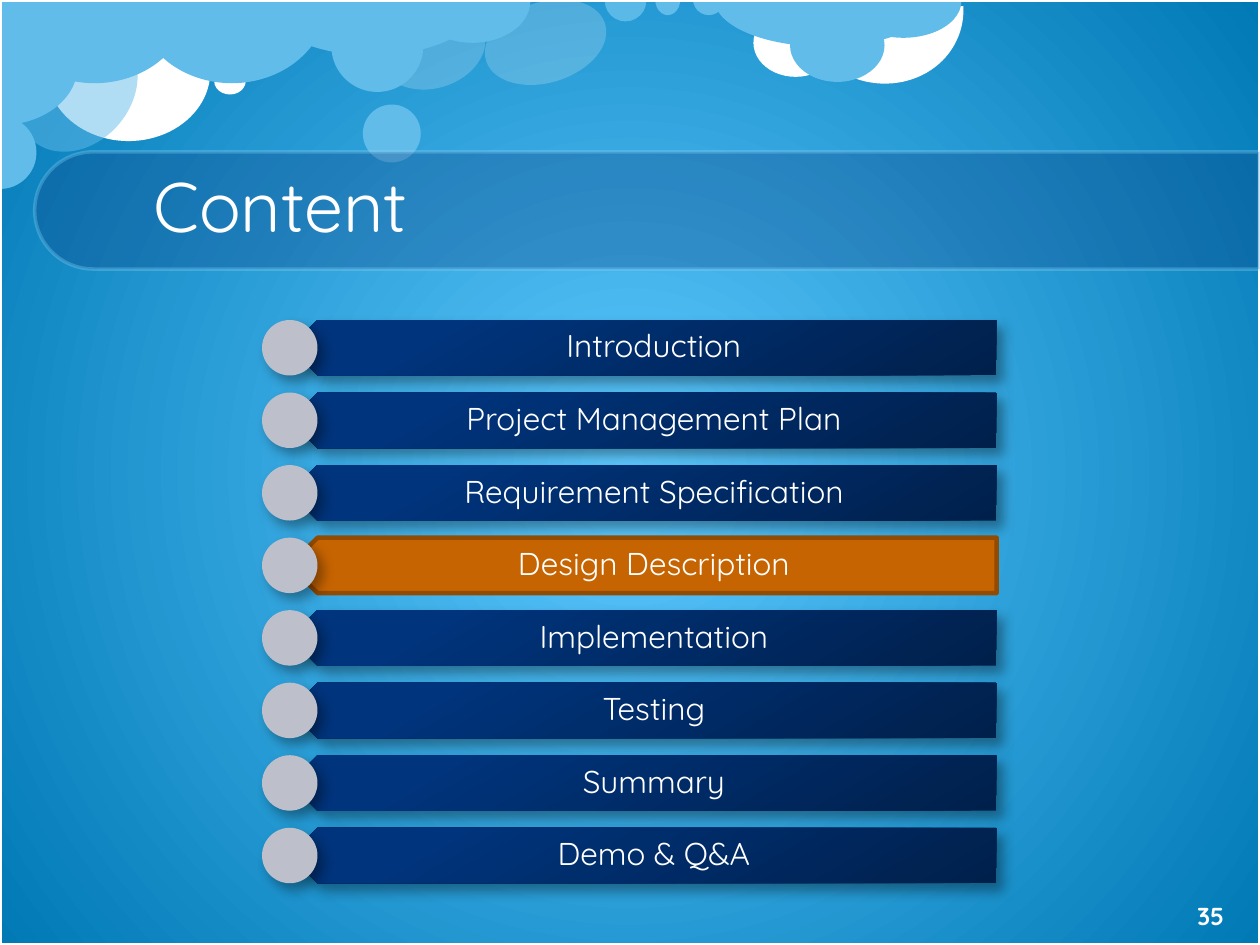
"""Build the agenda slide with a cloudy sky and the current topic highlighted."""
from typing import NamedTuple, Optional

import lxml.etree
import pptx
import pptx.dml.color
import pptx.enum.shapes
import pptx.enum.text
import pptx.oxml.ns
import pptx.util

Inches = pptx.util.Inches
Pt = pptx.util.Pt
RGBColor = pptx.dml.color.RGBColor
Shape = pptx.enum.shapes.MSO_SHAPE
Align = pptx.enum.text.PP_ALIGN
qn = pptx.oxml.ns.qn

FONT = "Quicksand"
WHITE = RGBColor(0xFF, 0xFF, 0xFF)
BLACK = RGBColor(0x00, 0x00, 0x00)
CLOUD = RGBColor(0x62, 0xBC, 0xE9)
PALE = RGBColor(0x8F, 0xD9, 0xFB)
BANNER = RGBColor(0x07, 0x37, 0x79)
SKY_CENTER = RGBColor(0x5D, 0xC9, 0xFF)
SKY_EDGE = RGBColor(0x00, 0x79, 0xB5)
NAVY_DARK = RGBColor(0x00, 0x20, 0x4C)
NAVY = RGBColor(0x00, 0x34, 0x7C)
NAVY_LIGHT = RGBColor(0x00, 0x34, 0x7D)
ORANGE = RGBColor(0xC7, 0x64, 0x02)
BROWN = RGBColor(0x93, 0x4A, 0x01)
GREY = RGBColor(0xBD, 0xBF, 0xCB)

HALF = (0, 108.0)
TOPICS = ["Introduction", "Project Management Plan", "Requirement Specification",
          "Design Description", "Implementation", "Testing", "Summary", "Demo & Q&A"]
CURRENT = "Design Description"
FIRST_TOP, LAST_TOP, ROW_H = 2.54, 6.57, 0.44


class Puff(NamedTuple):
    """One piece of a cloud, in inches and degrees."""
    left: float
    top: float
    width: float
    height: float
    kind: Shape = Shape.OVAL
    color: RGBColor = CLOUD
    alpha: int = 100
    rotation: float = 0
    adjust: tuple = ()


PUFFS = [
    Puff(3.11, -0.05, 0.64, 0.86, color=WHITE, alpha=20, rotation=72.8),
    Puff(0.37, 0.01, 1.3, 1.11, color=WHITE),
    Puff(6.39, -0.6, 1.21, 1.31, Shape.ARC, WHITE, rotation=106.5, adjust=(151.8, 44.48)),
    Puff(5.98, 0.07, 0.67, 0.54, color=WHITE),
    Puff(-0.01, -0.66, 1.52, 1.32, Shape.PIE, adjust=HALF),
    Puff(2.08, -0.44, 1.75, 0.88, Shape.PIE, adjust=HALF),
    Puff(2.88, 0.83, 0.46, 0.46),
    Puff(0.19, 0.18, 0.85, 1.07, alpha=50, rotation=41.8),
    Puff(-0.29, 0.92, 0.58, 0.58, Shape.PIE, rotation=270, adjust=HALF),
    Puff(1.7, 0.54, 0.25, 0.21, color=WHITE),
    Puff(1.08, -0.66, 1.52, 1.32, Shape.PIE, adjust=HALF),
    Puff(5.67, -0.38, 1.75, 0.75, Shape.PIE, adjust=HALF),
    Puff(6.27, 0.07, 0.75, 0.58),
    Puff(6.71, -0.28, 0.92, 0.58, Shape.PIE, adjust=HALF),
    Puff(4.01, -0.16, 0.64, 0.99, color=WHITE, alpha=20, rotation=72.8),
    Puff(4.8, -0.16, 0.33, 0.33, Shape.PIE, PALE, alpha=50, adjust=HALF),
    Puff(5.2, -0.13, 0.2, 0.25, Shape.PIE, adjust=HALF),
    Puff(5.5, -0.13, 0.25, 0.25, Shape.PIE, adjust=HALF),
    Puff(2.63, 0, 0.73, 0.73),
    Puff(3.29, -0.33, 0.92, 0.67, Shape.PIE, adjust=HALF),
    Puff(-0.47, -0.09, 0.93, 1.24, Shape.PIE, rotation=270, adjust=HALF),
]


def add_node(parent, tag: str, **attrs):
    return lxml.etree.SubElement(parent, qn(tag), {k: str(v) for k, v in attrs.items()})


def add_color(parent, color: RGBColor, alpha: int = 100) -> None:
    node = add_node(parent, "a:srgbClr", val=color)
    if alpha < 100:
        add_node(node, "a:alpha", val=alpha * 1000)


def set_alpha(parent, alpha: int) -> None:
    if alpha < 100:
        add_node(parent.find(".//" + qn("a:srgbClr")), "a:alpha", val=alpha * 1000)


def set_gradient(fill, parent, stops: list, angle: Optional[int] = None) -> None:
    fill.gradient()
    grad = parent.find(".//" + qn("a:gradFill"))
    for child in list(grad):
        grad.remove(child)
    grad.set("rotWithShape", "0")
    stop_list = add_node(grad, "a:gsLst")
    for position, color in stops:
        add_color(add_node(stop_list, "a:gs", pos=position * 1000), color)
    if angle is None:
        center = add_node(grad, "a:path", path="circle")
        add_node(center, "a:fillToRect", l=50000, t=50000, r=50000, b=50000)
    else:
        add_node(grad, "a:lin", ang=angle * 60000, scaled=0)


def add_shadow(sp) -> None:
    effects = sp._element.spPr.find(qn("a:effectLst"))
    shadow = add_node(effects, "a:outerShdw", blurRad=Pt(7), dist=Pt(5), dir=50 * 60000,
                      algn="tl", rotWithShape=0)
    add_color(shadow, BLACK, 35)


def add_shape(s, kind: Shape, box: tuple, fill: Optional[RGBColor] = None, alpha: int = 100,
              line: Optional[RGBColor] = None, weight: float = 2, line_alpha: int = 100,
              rotation: float = 0, adjust: tuple = ()):
    sp = s.shapes.add_shape(kind, *map(Inches, box))
    sp.shadow.inherit = False
    sp.rotation = rotation
    for i, value in enumerate(adjust):
        sp.adjustments[i] = value
    if fill is None:
        sp.fill.background()
    else:
        sp.fill.solid()
        sp.fill.fore_color.rgb = fill
        set_alpha(sp._element.spPr, alpha)
    if line is None:
        sp.line.fill.background()
    else:
        sp.line.color.rgb = line
        sp.line.width = Pt(weight)
        set_alpha(sp._element.spPr.find(qn("a:ln")), line_alpha)
    return sp


def add_text(s, text: str, box: tuple, size: float, bold: bool = False,
             align: Align = Align.CENTER, spacing=None, after=None,
             insets: tuple = (0.1, 0.05, 0.1, 0.05)) -> None:
    tf = s.shapes.add_textbox(*map(Inches, box)).text_frame
    tf.word_wrap = True
    tf.vertical_anchor = pptx.enum.text.MSO_ANCHOR.MIDDLE
    tf.margin_left, tf.margin_top, tf.margin_right, tf.margin_bottom = map(Inches, insets)
    p = tf.paragraphs[0]
    p.alignment = align
    p.line_spacing = spacing
    p.space_after = after
    r = p.add_run()
    r.text = text
    r.font.name = FONT
    r.font.size = Pt(size)
    r.font.bold = bold
    r.font.color.rgb = WHITE


def add_topic(s, topic: str, top: float) -> None:
    bar_box = (2.3, top, 5.61, ROW_H)
    if topic == CURRENT:
        add_shape(s, Shape.PENTAGON, bar_box, ORANGE, line=BROWN, weight=2.5, rotation=180)
    else:
        bar = add_shape(s, Shape.PENTAGON, bar_box, rotation=180)
        stops = [(0, NAVY_DARK), (80, NAVY), (100, NAVY_LIGHT)]
        set_gradient(bar.fill, bar._element.spPr, stops, angle=240)
        add_shadow(bar)
    add_text(s, topic, (2.41, top, 5.5, ROW_H), 18, spacing=0.9, after=Pt(6.3),
             insets=(0.2, 0.07, 0.14, 0.07))
    add_shadow(add_shape(s, Shape.OVAL, (2.08, top, ROW_H, ROW_H), GREY))


def main() -> None:
    prs = pptx.Presentation()
    prs.slide_width, prs.slide_height = Inches(10), Inches(7.5)
    s = prs.slides.add_slide(prs.slide_layouts[6])
    set_gradient(s.background.fill, s._element, [(0, SKY_CENTER), (100, SKY_EDGE)])
    for puff in PUFFS:
        add_shape(s, puff.kind, puff[:4], puff.color, puff.alpha,
                  rotation=puff.rotation, adjust=puff.adjust)
    add_shape(s, Shape.RECTANGLE, (0, 0, 10, 7.5), line=WHITE)
    add_shape(s, Shape.ROUND_2_SAME_RECTANGLE, (4.67, -3.19, 0.93, 9.72), BANNER, 30,
              line=PALE, line_alpha=30, rotation=270, adjust=(0.5, 0))
    add_text(s, "Content", (1.12, 1.18, 8.1, 0.78), 40, align=Align.LEFT, spacing=Pt(56))
    pitch = (LAST_TOP - FIRST_TOP) / (len(TOPICS) - 1)
    for i, topic in enumerate(TOPICS):
        add_topic(s, topic, FIRST_TOP + i * pitch)
    add_text(s, "35", (9.22, 7.05, 0.78, 0.43), 14, bold=True)
    prs.save("out.pptx")


if __name__ == "__main__":
    main()
